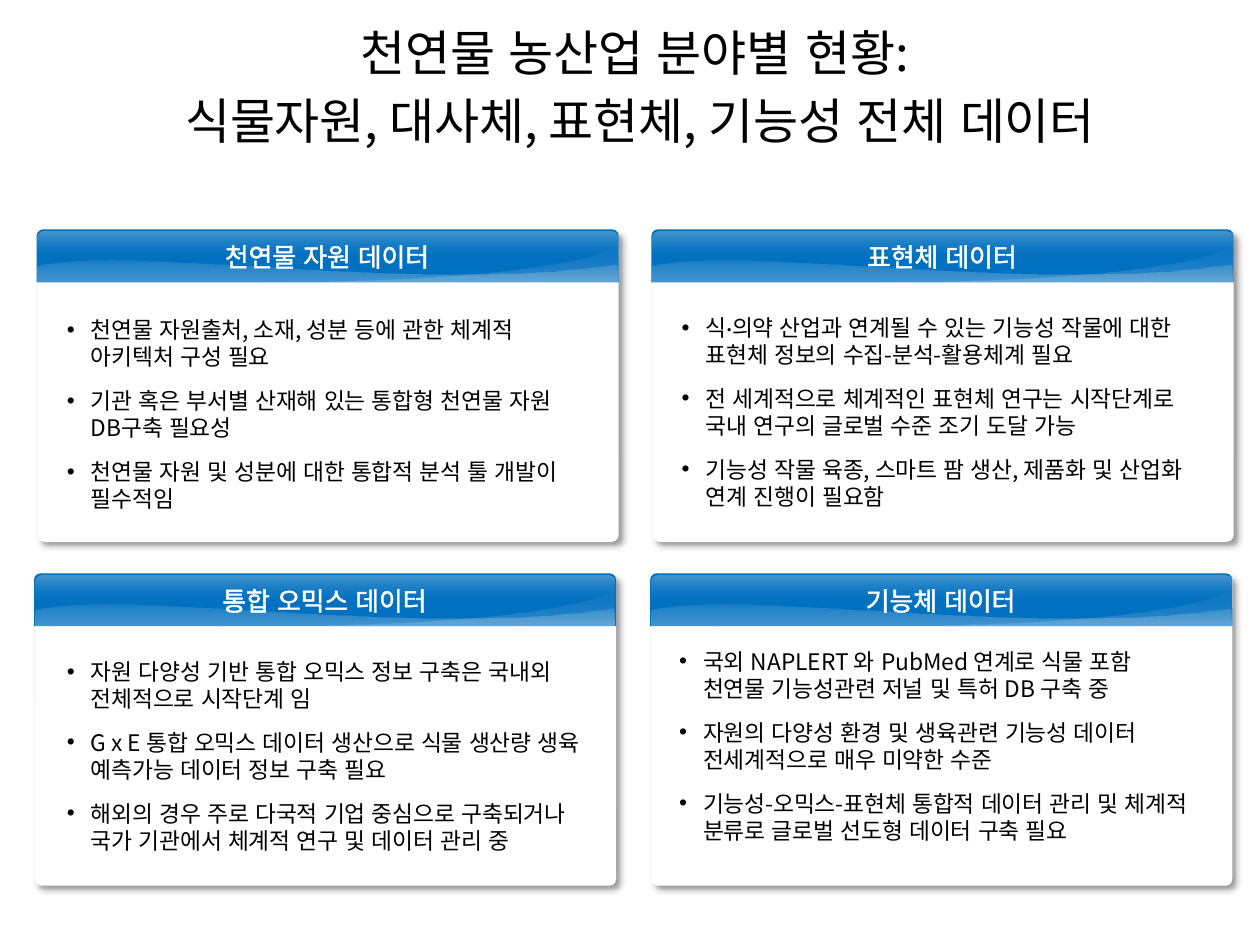
from itertools import groupby

from lxml import etree
from pptx import Presentation
from pptx import util as u
from pptx.dml import color
from pptx.enum import shapes, text
from pptx.oxml import ns, parse_xml

COLORS = {"blue": "0070C0", "white": "FFFFFF", "pale": "F2F2F2", "black": "000000"}
KOREAN, LATIN = "Noto Sans CJK KR", "Arial"
TITLE_STYLE = {"size": u.Pt(28), "bold": False, "name": KOREAN}
LIST_STYLE = {"size": u.Pt(13), "bold": False, "name": KOREAN}
HEADING_STYLE = {"size": u.Pt(14.8), "bold": False, "name": LATIN}
CARD_W, CARD_H, BAR_H = 4.61, 2.47, 0.42

# Left and top of the panel, heading, list frame, list items
PANELS = [
    (0.29, 1.82, "천연물 자원 데이터", (0.43, 2.46, 4.2, 1.68), [
        "천연물 자원출처, 소재, 성분 등에 관한 체계적 아키텍처 구성 필요",
        "기관 혹은 부서별 산재해 있는 통합형 천연물 자원 DB구축 필요성",
        "천연물 자원 및 성분에 대한 통합적 분석 툴 개발이 필수적임"]),
    (5.17, 1.82, "표현체 데이터", (5.31, 2.44, 4.25, 1.72), [
        "식·의약 산업과 연계될 수 있는 기능성 작물에 대한 표현체 정보의 수집-분석-활용체계 필요",
        "전 세계적으로 체계적인 표현체 연구는 시작단계로 국내 연구의 글로벌 수준 조기 도달 가능",
        "기능성 작물 육종, 스마트 팜 생산, 제품화 및 산업화 연계 진행이 필요함"]),
    (0.27, 4.55, "통합 오믹스 데이터", (0.43, 5.17, 4.39, 1.68), [
        "자원 다양성 기반 통합 오믹스 정보 구축은 국내외 전체적으로 시작단계 임",
        "G x E 통합 오믹스 데이터 생산으로 식물 생산량 생육 예측가능 데이터 정보 구축 필요",
        "해외의 경우 주로 다국적 기업 중심으로 구축되거나 국가 기관에서 체계적 연구 및 데이터 관리 중"]),
    (5.16, 4.55, "기능체 데이터", (5.29, 5.09, 4.28, 1.68), [
        "국외 NAPLERT 와 PubMed 연계로 식물 포함 천연물 기능성관련 저널 및 특허 DB 구축 중",
        "자원의 다양성 환경 및 생육관련 기능성 데이터 전세계적으로 매우 미약한 수준",
        "기능성-오믹스-표현체 통합적 데이터 관리 및 체계적 분류로 글로벌 선도형 데이터 구축 필요"]),
]

# Panel parts, measured from the panel's corner
BAR_PARTS = [  # left, top, width, height, corner
    (0, 0, 4.62, BAR_H, 0.123),
    (0.01, 0.02, 4.6, 0.24, 0.196),
]
WAVES = [  # curve start, two controls, end, then corners; opacity at bottom and top
    ([(0.01, 0.29), (0.76, 0.12), (3.05, 0.51), (4.6, 0.28),
      (4.61, BAR_H), (0.01, BAR_H)], (30, 10)),
    ([(4.6, 0.14), (4.13, 0.39), (2.27, 0.41), (1.71, BAR_H),
      (4.61, BAR_H)], (20, 0)),
]


def paint(shape, fill, angle=None):
    """Fill with one colour, or with (colour, opacity) stops at an angle."""
    shape.shadow.inherit = False
    shape.line.fill.background()
    if angle is None:
        shape.fill.solid()
        shape.fill.fore_color.rgb = color.RGBColor.from_string(COLORS[fill])
        return
    shape.fill.background()
    stops = "".join(
        f'<a:gs pos="{place * 100000}"><a:srgbClr val="{COLORS[name]}">'
        f'<a:alpha val="{opacity * 1000}"/></a:srgbClr></a:gs>'
        for place, (name, opacity) in enumerate(fill))
    gradient = parse_xml(
        f'<a:gradFill {ns.nsdecls("a")} rotWithShape="1"><a:gsLst>{stops}</a:gsLst>'
        f'<a:lin ang="{angle * 60000}" scaled="0"/></a:gradFill>')
    properties = shape._element.spPr
    properties.replace(properties.find(ns.qn("a:noFill")), gradient)


def write(para, words, style, hue):
    """Add the words in one style; the middle dot has its own font."""
    for is_dot, letters in groupby(words, key=lambda letter: letter == "·"):
        span = para.add_run()
        span.text = "".join(letters)
        for key, value in style.items():
            setattr(span.font, key, value)
        if is_dot:
            span.font.name = "Calibri"
        span.font.color.rgb = color.RGBColor.from_string(COLORS[hue])
        latin = span._r.rPr.find(ns.qn("a:latin"))
        latin.addnext(parse_xml(f'<a:ea {ns.nsdecls("a")} typeface="{LATIN}"/>'))


deck = Presentation()
deck.slide_width, deck.slide_height = u.Inches(10), u.Inches(7.5)
page = deck.slides.add_slide(deck.slide_layouts.get_by_name("Comparison"))
title = page.shapes.title
lists = [box for box in page.placeholders if 1 <= box.placeholder_format.idx <= 4]

# Panels: card, glossy heading bar, heading
for left, top, heading, frame, items in PANELS:
    panel = page.shapes.add_group_shape().shapes
    card = panel.add_shape(
        shapes.MSO_SHAPE.ROUNDED_RECTANGLE, u.Inches(left + 0.01), u.Inches(top + 0.01),
        u.Inches(CARD_W), u.Inches(CARD_H))
    card.adjustments[0] = 0.021
    paint(card, "white")
    card._element.spPr.find(ns.qn("a:effectLst")).append(parse_xml(
        f'<a:outerShdw {ns.nsdecls("a")} blurRad="{u.Pt(4)}" dist="{u.Pt(3)}" dir="2700000" '
        f'algn="tl" rotWithShape="0"><a:srgbClr val="{COLORS["black"]}">'
        '<a:alpha val="40000"/></a:srgbClr></a:outerShdw>'))

    bars = []
    for x, y, width, height, corner in BAR_PARTS:
        bar = panel.add_shape(
            shapes.MSO_SHAPE.ROUND_2_SAME_RECTANGLE, u.Inches(left + x), u.Inches(top + y),
            u.Inches(width), u.Inches(height))
        bar.adjustments[0], bar.adjustments[1] = corner, 0
        bars.append(bar)
    paint(bars[0], "blue")
    paint(bars[1], [("pale", 30), ("blue", 0)], 90)

    for outline, (low, high) in WAVES:
        points = [(u.Inches(left + x), u.Inches(top + y)) for x, y in outline]
        builder = panel.build_freeform(*points[0])
        builder.add_line_segments(points[1:], close=True)
        wave = builder.convert_to_shape()
        # Turn the first three line segments into one curve
        segments = list(wave._element.iter(ns.qn("a:lnTo")))[:3]
        curve = etree.Element(ns.qn("a:cubicBezTo"))
        segments[0].addprevious(curve)
        for segment in segments:
            curve.append(segment[0])
            segment.getparent().remove(segment)
        paint(wave, [("pale", low), ("white", high)], 270)

    box = panel.add_textbox(u.Inches(left), u.Inches(top - 0.01), u.Inches(CARD_W), u.Inches(0.4))
    for key, value in {"word_wrap": True, "vertical_anchor": text.MSO_ANCHOR.MIDDLE,
                       "margin_left": 0, "margin_right": 0,
                       "margin_top": 0, "margin_bottom": 0}.items():
        setattr(box.text_frame, key, value)
    para = box.text_frame.paragraphs[0]
    para.alignment, para.line_spacing = text.PP_ALIGN.CENTER, 1.2
    write(para, heading, HEADING_STYLE, "white")
    para.runs[0]._r.rPr.insert(0, parse_xml(
        f'<a:ln {ns.nsdecls("a")} w="{u.Pt(0.75)}"><a:solidFill>'
        f'<a:srgbClr val="{COLORS["white"]}"/></a:solidFill></a:ln>'))

# Title and lists, in front of the panels
contents = [(title, (0.83, 0.13, 8.5, 1.1),
             ["천연물 농산업 분야별 현황: ", "식물자원, 대사체, 표현체, 기능성 전체 데이터"])]
contents += [(box, panel[3], panel[4]) for box, panel in zip(lists, PANELS)]
for box, frame, lines in contents:
    page.shapes._spTree.append(box._element)
    box.left, box.top, box.width, box.height = [u.Inches(value) for value in frame]
    for key, value in {"word_wrap": True, "auto_size": text.MSO_AUTO_SIZE.NONE,
                       "vertical_anchor": text.MSO_ANCHOR.TOP}.items():
        setattr(box.text_frame, key, value)
    is_title = box is title
    for number, line in enumerate(lines):
        para = box.text_frame.add_paragraph() if number else box.text_frame.paragraphs[0]
        if not is_title:
            properties = para._p.get_or_add_pPr()
            properties.set("marL", str(u.Inches(0.19)))
            properties.set("indent", str(u.Inches(-0.19)))
            etree.SubElement(properties, ns.qn("a:buFont")).set("typeface", LATIN)
            etree.SubElement(properties, ns.qn("a:buChar")).set("char", "•")
        para.alignment = text.PP_ALIGN.CENTER if is_title else text.PP_ALIGN.LEFT
        para.line_spacing = u.Pt(33.3 if is_title else 15.5)
        para.space_before = u.Pt((5.6 if is_title else 9.5) if number else 0)
        write(para, line, TITLE_STYLE if is_title else LIST_STYLE, "black")

deck.save("out.pptx")
